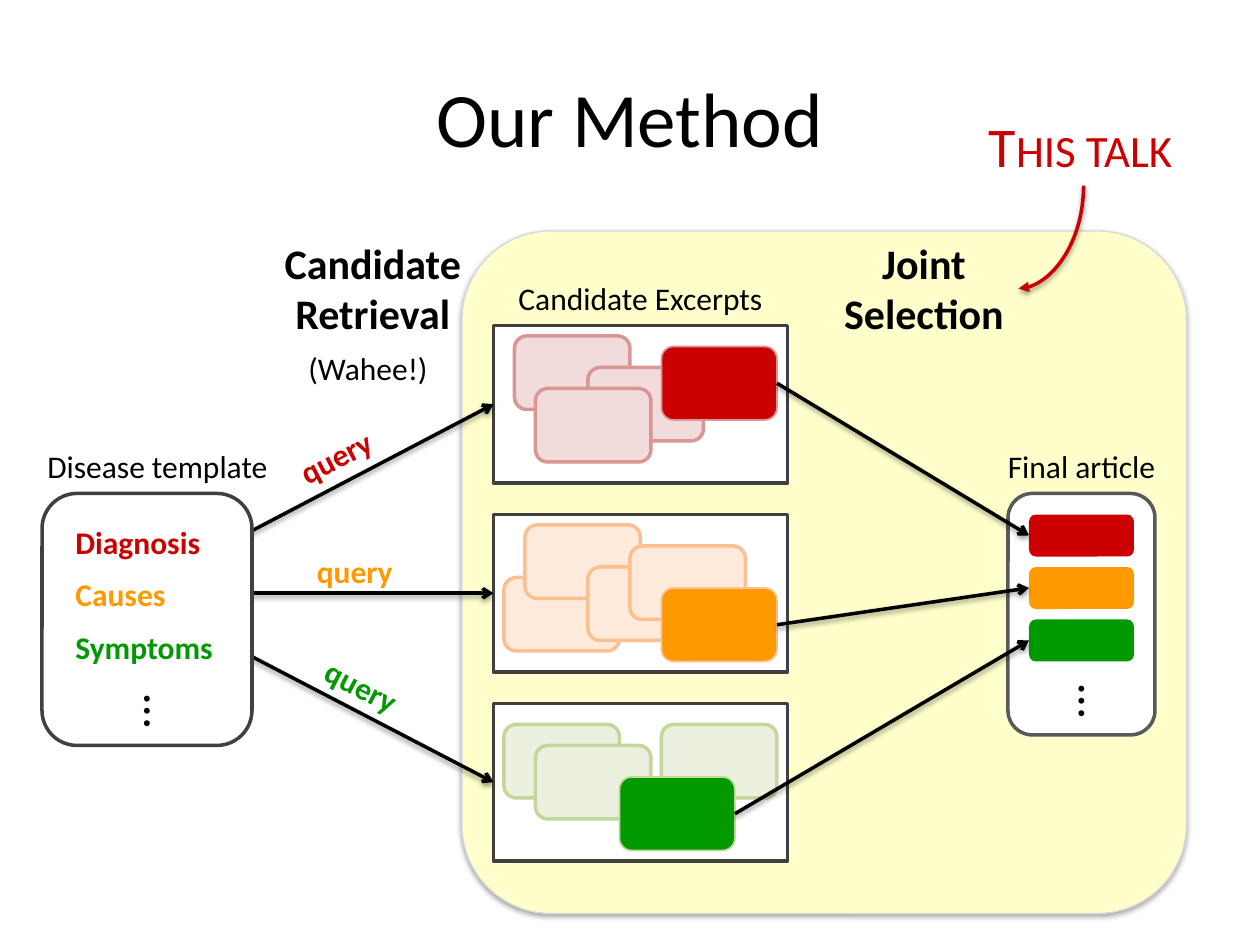
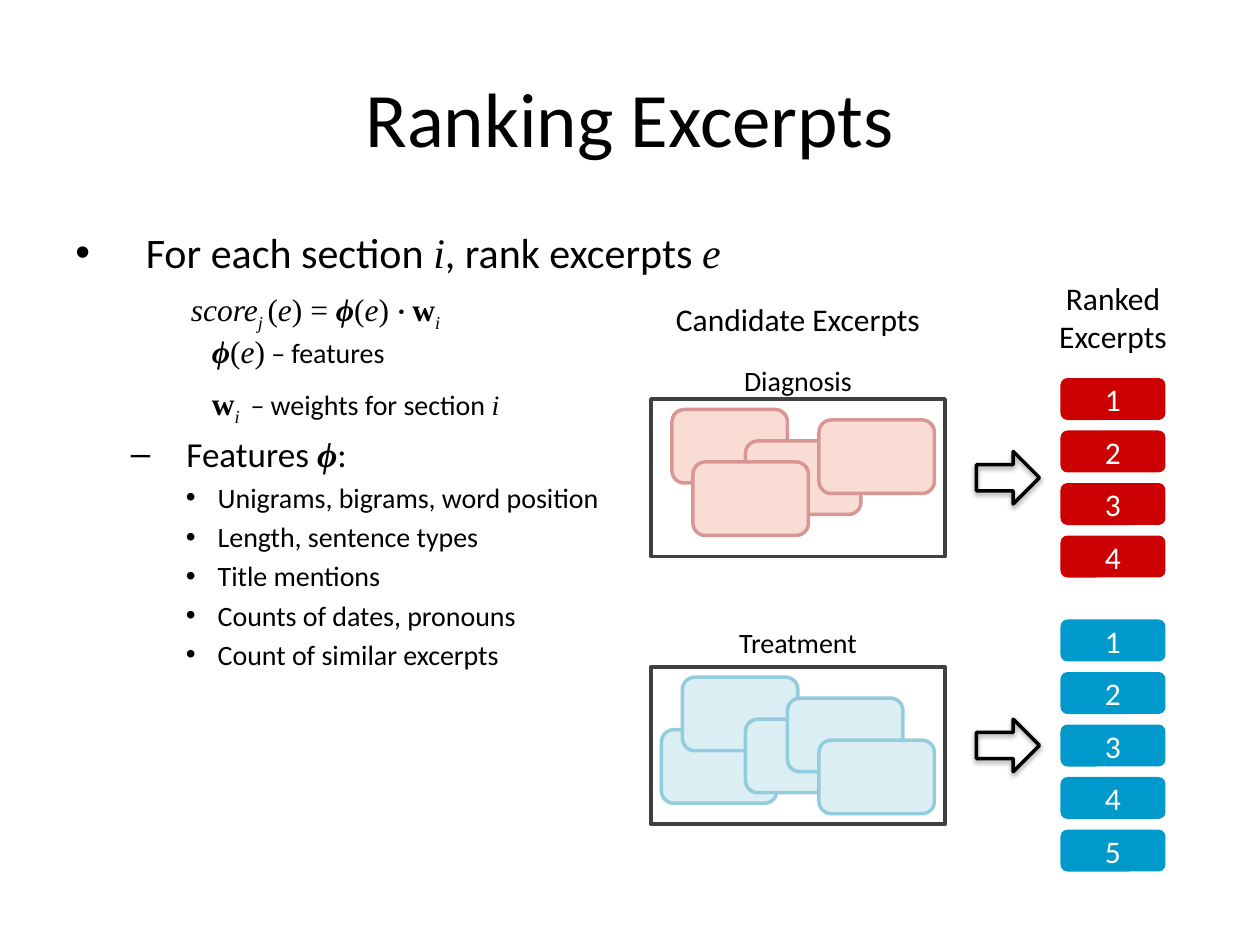
from dataclasses import dataclass
from typing import NamedTuple, Optional

from lxml import etree
from pptx import Presentation
from pptx import util as u
from pptx.dml import color
from pptx.enum import shapes, text
from pptx.oxml import ns

GRID = 25.4 / 120  # the slide is 120 by 90 grid units, in centimetres
CARD_SIZE = (11, 7)
FRAME_SIZE = (28, 15)
BAR_SIZE = (10, 4)
BAR_STEP = 5
LABEL_HEIGHT = 4.8


@dataclass(frozen=True)
class Theme:
    font: str = "Calibri"
    math_font: str = "Times New Roman"
    black: str = "000000"
    white: str = "FFFFFF"
    frame: str = "404040"
    article: str = "595959"
    panel: str = "FFFFCC"
    panel_edge: str = "D9D9D9"
    red: str = "CC0000"
    orange: str = "FF9900"
    green: str = "009900"
    blue: str = "0099CC"
    title: float = 44
    callout: float = 32
    dots: float = 28
    heading: float = 24
    subheading: float = 20
    body: float = 18
    detail: float = 16
    tiny: float = 14
    stroke: float = 2


THEME = Theme()


class Box(NamedTuple):
    """A place in grid units."""
    left: float
    top: float
    width: float
    height: float

    def left_middle(self) -> tuple[float, float]:
        return self.left, self.top + self.height / 2

    def right_middle(self) -> tuple[float, float]:
        return self.left + self.width, self.top + self.height / 2


@dataclass(frozen=True)
class Span:
    text: str
    size: float = THEME.body
    color: str = THEME.black
    font: str = THEME.font
    bold: bool = False
    italic: bool = False
    subscript: bool = False
    small_caps: bool = False


@dataclass(frozen=True)
class Level:
    bullet: str
    margin: float
    hanging: float


@dataclass(frozen=True)
class Section:
    name: str
    solid: str
    pale: str
    edge: str
    top: float
    cards: tuple[tuple[float, float], ...]
    chosen: Optional[tuple[float, float]] = None
    label_top: float = 0
    ranks_top: float = 0
    ranks: int = 0


FOUR_CARDS = ((2, 1), (9, 4), (4, 6))
FIVE_CARDS = ((1, 6), (3, 1), (9, 5), (13, 3))
METHOD_SECTIONS = (
    Section("Diagnosis", THEME.red, "F2DCDB", "D99694", 31, FOUR_CARDS, (16, 2)),
    Section("Causes", THEME.orange, "FDEADA", "FAC090", 49, FIVE_CARDS, (16, 7)),
    Section("Symptoms", THEME.green, "EBF1DE", "C3D69B", 67,
            ((1, 2), (4, 4), (16, 2)), (12, 7)),
)
RANKED_SECTIONS = (
    Section("Diagnosis", THEME.red, "F9DDD5", "D99694", 38, FOUR_CARDS + ((16, 2),),
            label_top=34, ranks_top=36, ranks=4),
    Section("Treatment", THEME.blue, "DBEEF4", "93CDDD", 63.5, FIVE_CARDS + ((16, 7),),
            label_top=59, ranks_top=59, ranks=5),
)
QUERY_LABELS = ((26.8, 39.6, 332.5), (29, 52, 0), (29.3, 64.4, 27.2))
QUERY_STARTS = (51.6, 56.5, 61.5)


def grid(*units: float) -> list[u.Length]:
    return [u.Cm(unit * GRID) for unit in units]


def rgb(code: str) -> color.RGBColor:
    return color.RGBColor.from_string(code)


def add_spans(para, *spans: Span) -> None:
    for span in spans:
        if span.text == "\n":
            para.add_line_break()
            continue
        run = para.add_run()
        run.text = span.text
        run.font.name = span.font
        run.font.size = u.Pt(span.size)
        run.font.color.rgb = rgb(span.color)
        run.font.bold = span.bold
        run.font.italic = span.italic
        properties = run.font._element
        if span.subscript:
            properties.set("baseline", "-25000")
        if span.small_caps:
            properties.set("cap", "small")


def add_label(page, place: Box, *lines: list[Span], centered: bool = False,
              wrap: bool = True, rotation: float = 0, vertical: bool = False):
    box = page.shapes.add_textbox(*grid(*place))
    box.rotation = rotation
    frame = box.text_frame
    frame.word_wrap = wrap
    frame.auto_size = text.MSO_AUTO_SIZE.SHAPE_TO_FIT_TEXT
    if vertical:
        frame._txBody.bodyPr.set("vert", "vert")
    for index, spans in enumerate(lines):
        para = frame.add_paragraph() if index else frame.paragraphs[0]
        if centered:
            para.alignment = text.PP_ALIGN.CENTER
        add_spans(para, *spans)


def cast_shadow(shape, alpha: int = 38, distance: float = 1.6) -> None:
    properties = shape._element.spPr
    effects = properties.find(ns.qn("a:effectLst"))
    if effects is None:
        effects = etree.SubElement(properties, ns.qn("a:effectLst"))
    shadow = etree.SubElement(effects, ns.qn("a:outerShdw"), blurRad=str(u.Pt(3.1)),
                              dist=str(u.Pt(distance)), dir="5400000", rotWithShape="0")
    tint = etree.SubElement(shadow, ns.qn("a:srgbClr"), val=THEME.black)
    etree.SubElement(tint, ns.qn("a:alpha"), val=str(alpha * 1000))


def add_box(page, place: Box, fill: Optional[str], edge: Optional[str] = None,
            kind=shapes.MSO_SHAPE.ROUNDED_RECTANGLE, width: float = THEME.stroke):
    box = page.shapes.add_shape(kind, *grid(*place))
    box.shadow.inherit = False
    if fill:
        box.fill.solid()
        box.fill.fore_color.rgb = rgb(fill)
    else:
        box.fill.background()
    if edge:
        box.line.color.rgb = rgb(edge)
        box.line.width = u.Pt(width)
    else:
        box.line.fill.background()
    return box


def add_arrow(page, start: tuple[float, float], end: tuple[float, float],
              kind=shapes.MSO_CONNECTOR.STRAIGHT, ink: str = THEME.black,
              tip: str = "tailEnd", tip_type: str = "arrow"):
    arrow = page.shapes.add_connector(kind, *grid(*start, *end))
    arrow.line.color.rgb = rgb(ink)
    arrow.line.width = u.Pt(THEME.stroke)
    etree.SubElement(arrow.line._get_or_add_ln(), ns.qn(f"a:{tip}"), type=tip_type)
    cast_shadow(arrow)
    return arrow


def add_page(deck, title: str):
    page = deck.slides.add_slide(deck.slide_layouts.get_by_name("Title Only"))
    heading = page.shapes.title
    heading.left, heading.top, heading.width, heading.height = grid(6, 3.6, 108, 15)
    heading.text_frame.vertical_anchor = text.MSO_ANCHOR.MIDDLE
    para = heading.text_frame.paragraphs[0]
    para.alignment = text.PP_ALIGN.CENTER
    add_spans(para, Span(title, THEME.title))
    return page


def add_excerpts(page, section: Section, left: float) -> tuple[Box, Optional[Box]]:
    """Draw a frame of overlapping cards; give back the frame and the chosen card."""
    frame = Box(left, section.top, *FRAME_SIZE)
    add_box(page, frame, THEME.white, THEME.frame, shapes.MSO_SHAPE.RECTANGLE)
    for across, down in section.cards:
        add_box(page, Box(left + across, section.top + down, *CARD_SIZE),
                section.pale, section.edge)
    if section.chosen is None:
        return frame, None
    across, down = section.chosen
    chosen = Box(left + across, section.top + down, *CARD_SIZE)
    add_box(page, chosen, section.solid, section.edge, width=1)
    return frame, chosen


def add_method_page(deck) -> None:
    page = add_page(deck, "Our Method")
    panel = add_box(page, Box(44, 22, 69, 65), THEME.panel, THEME.panel_edge, width=0.75)
    panel.adjustments[0] = 0.13
    cast_shadow(panel, 35, 1.8)

    placed = [add_excerpts(page, section, 47) for section in METHOD_SECTIONS]
    for (frame, _), start in zip(placed, QUERY_STARTS):
        add_arrow(page, (22, start), frame.left_middle())
    add_box(page, Box(4, 47, 20, 24), THEME.white, THEME.frame)
    add_box(page, Box(96, 47, 14, 23), THEME.white, THEME.article)

    for index, section in enumerate(METHOD_SECTIONS):
        add_label(page, Box(6, 49.2 + BAR_STEP * index, 16, LABEL_HEIGHT),
                  [Span(section.name, color=section.solid, bold=True)])
        left, top, rotation = QUERY_LABELS[index]
        add_label(page, Box(left, top, 16, LABEL_HEIGHT),
                  [Span("query", color=section.solid, bold=True)], rotation=rotation)
        bar = Box(98, 49 + BAR_STEP * index, *BAR_SIZE)
        add_box(page, bar, section.solid)
        add_arrow(page, placed[index][1].right_middle(), bar.left_middle())

    for left, top in ((11, 65), (100, 64)):
        add_label(page, Box(left, top, 8, 4.4), [Span("…", THEME.dots)],
                  wrap=False, vertical=True)
    add_label(page, Box(25, 22, 21, 15.7),
              [Span("Candidate Retrieval", THEME.heading, bold=True)],
              [Span("(Wahee!)"), Span(" ", THEME.heading, bold=True)], centered=True)
    add_label(page, Box(79, 22, 18, 10.9),
              [Span("Joint Selection", THEME.heading, bold=True)], centered=True)
    for caption, left, top in (("Disease template", 2, 42), ("Candidate Excerpts", 48, 26),
                               ("Final article", 90, 42)):
        add_label(page, Box(left, top, 26, LABEL_HEIGHT), [Span(caption)], centered=True)

    add_label(page, Box(93, 10, 20.4, 7.7),
              [Span("This talk", THEME.callout, THEME.red, small_caps=True)], wrap=False)
    curve = add_arrow(page, (97, 27.5), (103.2, 17.7), shapes.MSO_CONNECTOR.CURVE,
                      THEME.red, "headEnd", "triangle")
    curve._element.spPr.find(ns.qn("a:prstGeom")).set("prst", "curvedConnector2")


def formula(content: str, size: float = THEME.body, **style: bool) -> Span:
    return Span(content, size, font=THEME.math_font, **style)


def add_outline(page) -> None:
    top = Level("•", 1.42, 1.42)
    middle = Level("–", 2.24, 1.12)
    low = Level("•", 2.87, 0.64)
    head, sub = THEME.heading, THEME.subheading
    features = ("Unigrams, bigrams, word position", "Length, sentence types",
                "Title mentions", "Counts of dates, pronouns", "Count of similar excerpts")
    items = [
        (top, 0, [Span("For each section ", head), formula("i", head, italic=True),
                  Span(", rank excerpts ", head), formula("e", head, italic=True)]),
        (middle, 89, [Span("Features ", sub), formula("ϕ", sub, bold=True, italic=True),
                      Span(":", sub)]),
    ] + [(low, 3.2, [Span(feature, THEME.detail)]) for feature in features]

    frame = page.shapes.add_textbox(*grid(6, 21, 108, 59.4)).text_frame
    frame.word_wrap = True
    for index, (level, space, spans) in enumerate(items):
        para = frame.add_paragraph() if index else frame.paragraphs[0]
        para.space_before = u.Pt(space)
        properties = para._p.get_or_add_pPr()
        properties.set("marL", str(u.Cm(level.margin)))
        properties.set("indent", str(-u.Cm(level.hanging)))
        etree.SubElement(properties, ns.qn("a:buFont"), typeface="Arial")
        etree.SubElement(properties, ns.qn("a:buChar"), char=level.bullet)
        add_spans(para, *spans)


def add_ranking_page(deck) -> None:
    page = add_page(deck, "Ranking Excerpts")
    add_outline(page)
    phi = [formula("ϕ", bold=True, italic=True), formula("("),
           formula("e", italic=True)]
    add_label(page, Box(17, 27, 36, LABEL_HEIGHT), [
        formula("score", italic=True), formula("j ", italic=True, subscript=True),
        formula("("), formula("e", italic=True), formula(") = "), *phi, formula(") "),
        formula("·", THEME.detail, bold=True), formula(" ", THEME.tiny, bold=True),
        formula("w", bold=True), formula("i", italic=True, subscript=True)])
    add_label(page, Box(19, 31, 36, LABEL_HEIGHT),
              [*phi, formula(")"), Span(" – features", THEME.detail)])
    add_label(page, Box(19, 36, 36, LABEL_HEIGHT), [
        formula("w", bold=True), formula("i ", italic=True, subscript=True),
        Span(" – weights for section ", THEME.detail),
        formula("i", THEME.detail, italic=True)])

    for section in RANKED_SECTIONS:
        add_excerpts(page, section, 62)
        add_label(page, Box(62, section.label_top, 28, 4.4),
                  [Span(section.name, THEME.detail)], centered=True)
        cast_shadow(add_box(page, Box(93, section.top + 5, 6, 5), None, THEME.black,
                            shapes.MSO_SHAPE.RIGHT_ARROW))
        for index in range(section.ranks):
            bar = add_box(page, Box(101, section.ranks_top + BAR_STEP * index, *BAR_SIZE),
                          section.solid)
            bar.text_frame.vertical_anchor = text.MSO_ANCHOR.MIDDLE
            para = bar.text_frame.paragraphs[0]
            para.alignment = text.PP_ALIGN.CENTER
            add_spans(para, Span(str(index + 1), color=THEME.white))
    add_label(page, Box(63, 28, 26, LABEL_HEIGHT), [Span("Candidate Excerpts")],
              centered=True)
    add_label(page, Box(93, 26, 26, 8.5), [Span("Ranked"), Span("\n"), Span("Excerpts")],
              centered=True)


def main() -> None:
    deck = Presentation()
    deck.slide_width, deck.slide_height = u.Cm(25.4), u.Cm(19.05)
    add_method_page(deck)
    add_ranking_page(deck)
    deck.save("out.pptx")


if __name__ == "__main__":
    main()
